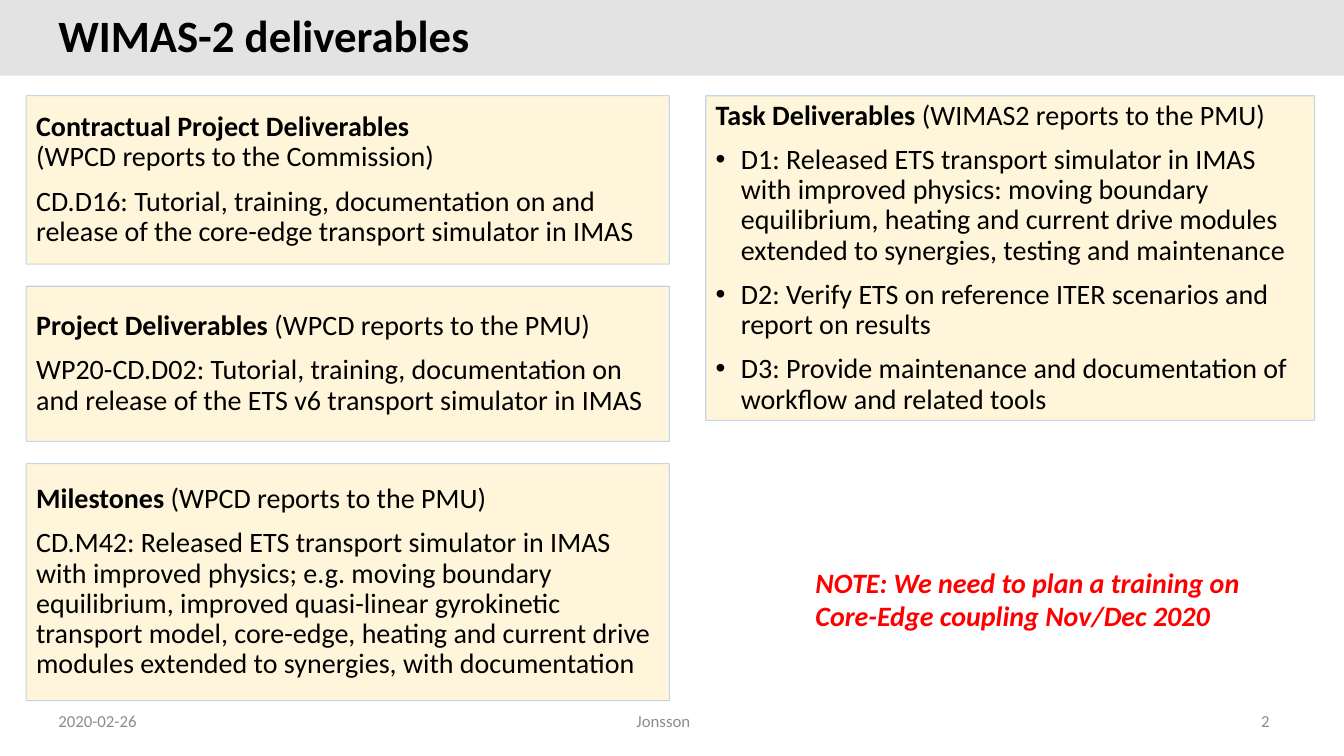
from pptx import Presentation
from pptx.dml.color import RGBColor
from pptx.enum.shapes import MSO_SHAPE as Shape
from pptx.enum.text import MSO_ANCHOR as Anchor, PP_ALIGN as Align
from pptx.oxml.ns import qn
from pptx.util import Inches, Pt
from lxml.etree import SubElement

WIDTH, HEIGHT = 13.33, 7.5
TITLE = "WIMAS-2 deliverables"
NOTE = "NOTE: We need to plan a training on Core-Edge coupling Nov/Dec 2020"
FOOTER = [
    ("2020-02-26", 0.48, 3, Align.LEFT),
    ("Jonsson", 4.33, 4.5, Align.CENTER),
    ("2", 9.69, 3, Align.RIGHT),
]
COLUMNS = [
    {"left": 0.26, "width": 6.38, "bullets": False, "panels": [
        (1.67, "Contractual Project Deliverables", "\v(WPCD reports to the Commission)", [
            "CD.D16: Tutorial, training, documentation on and release of the "
            "core-edge transport simulator in IMAS"]),
        (1.54, "Project Deliverables", " (WPCD reports to the PMU)", [
            "WP20-CD.D02: Tutorial, training, documentation on and release of "
            "the ETS v6 transport simulator in IMAS"]),
        (2.35, "Milestones", " (WPCD reports to the PMU)", [
            "CD.M42: Released ETS transport simulator in IMAS with improved physics; "
            "e.g. moving boundary equilibrium, improved quasi-linear gyrokinetic "
            "transport model, core-edge, heating and current drive modules extended "
            "to synergies, with documentation"]),
    ]},
    {"left": 7, "width": 6.04, "bullets": True, "panels": [
        (3.22, "Task Deliverables", " (WIMAS2 reports to the PMU)", [
            "D1: Released ETS transport simulator in IMAS with improved physics: "
            "moving boundary equilibrium, heating and current drive modules extended "
            "to synergies, testing and maintenance",
            "D2: Verify ETS on reference ITER scenarios and report on results",
            "D3: Provide maintenance and documentation of workflow and related tools"]),
    ]},
]
PANEL_TOP, PANEL_GAP = 0.95, 0.22
TITLE_FONT = {"size": Pt(32), "bold": True}
BODY_FONT = {"size": Pt(20), "bold": False}
HEAD_FONT = {"size": Pt(20), "bold": True}
NOTE_FONT = {"size": Pt(20), "bold": True, "italic": True}
FOOTER_FONT = {"size": Pt(12)}


def paint(color_format, color, opacity=100):
    """Set a colour from a hex string, with an opacity in percent."""
    color_format.rgb = RGBColor.from_string(color)
    if opacity < 100:
        node = next(color_format._xFill.iter(qn("a:srgbClr")))
        SubElement(node, qn("a:alpha"), val=str(opacity * 1000))


def add_span(para, text, font, color="000000"):
    """Add a formatted run, turning a leading vertical tab into a line break."""
    if text.startswith("\v"):
        para.add_line_break()
    span = para.add_run()
    span.text = text.lstrip("\v")
    for name, value in {"name": "Calibri", **font}.items():
        setattr(span.font, name, value)
    paint(span.font.color, color)


def add_rect(page, left, top, width, height, fill, opacity=100):
    """Add a flat filled rectangle without an outline."""
    box = page.shapes.add_shape(Shape.RECTANGLE, *map(Inches, (left, top, width, height)))
    box.shadow.inherit = False
    box.fill.solid()
    paint(box.fill.fore_color, fill, opacity)
    box.line.fill.background()
    return box


def add_label(page, place, text, font, color="000000", anchor=Anchor.MIDDLE, align=Align.LEFT):
    """Add a wrapping one-paragraph text box."""
    frame = page.shapes.add_textbox(*map(Inches, place)).text_frame
    frame.word_wrap, frame.vertical_anchor = True, anchor
    para = frame.paragraphs[0]
    para.alignment = align
    add_span(para, text, font, color)
    return para


def add_bullet(para):
    """Give a paragraph a hanging round bullet."""
    props = para._p.get_or_add_pPr()
    props.set("marL", str(Inches(0.25)))
    props.set("indent", str(-Inches(0.25)))
    SubElement(props, qn("a:buFont"), typeface="Arial")
    SubElement(props, qn("a:buChar"), char="•")


def add_panel(page, place, heading, suffix, items, bullets):
    """Add a framed panel with a heading and its items."""
    box = add_rect(page, *place, "FFF2CC", 70)
    box.line.fill.solid()
    paint(box.line.color, "5B9BD5", 36)
    box.line.width = Pt(0.75)
    frame = box.text_frame
    frame.word_wrap, frame.vertical_anchor = True, Anchor.MIDDLE
    head = frame.paragraphs[0]
    add_span(head, heading, HEAD_FONT)
    add_span(head, suffix, BODY_FONT)
    for item in items:
        para = frame.add_paragraph()
        para.space_before = Pt(10)
        if bullets:
            add_bullet(para)
        add_span(para, item, BODY_FONT)
    for para in frame.paragraphs:
        para.alignment, para.line_spacing = Align.LEFT, 0.9


def main():
    """Build the deliverables slide."""
    deck = Presentation()
    deck.slide_width, deck.slide_height = Inches(WIDTH), Inches(HEIGHT)
    page = deck.slides.add_slide(deck.slide_layouts[6])
    add_rect(page, 0, 0, WIDTH, HEIGHT / 10, "E3E3E3")
    add_label(page, (0.48, 0.13, 11.54, 0.49), TITLE, TITLE_FONT).line_spacing = 0.9
    for column in COLUMNS:
        top = PANEL_TOP
        for height, heading, suffix, items in column["panels"]:
            place = (column["left"], top, column["width"], height)
            add_panel(page, place, heading, suffix, items, column["bullets"])
            top += height + PANEL_GAP
    for text, left, width, align in FOOTER:
        add_label(page, (left, 6.95, width, 0.4), text, FOOTER_FONT, "8C8C8C", align=align)
    add_label(page, (7.99, 5.56, 4.44, 0.77), NOTE, NOTE_FONT, "FF0000", Anchor.TOP)
    deck.save("out.pptx")


if __name__ == "__main__":
    main()
